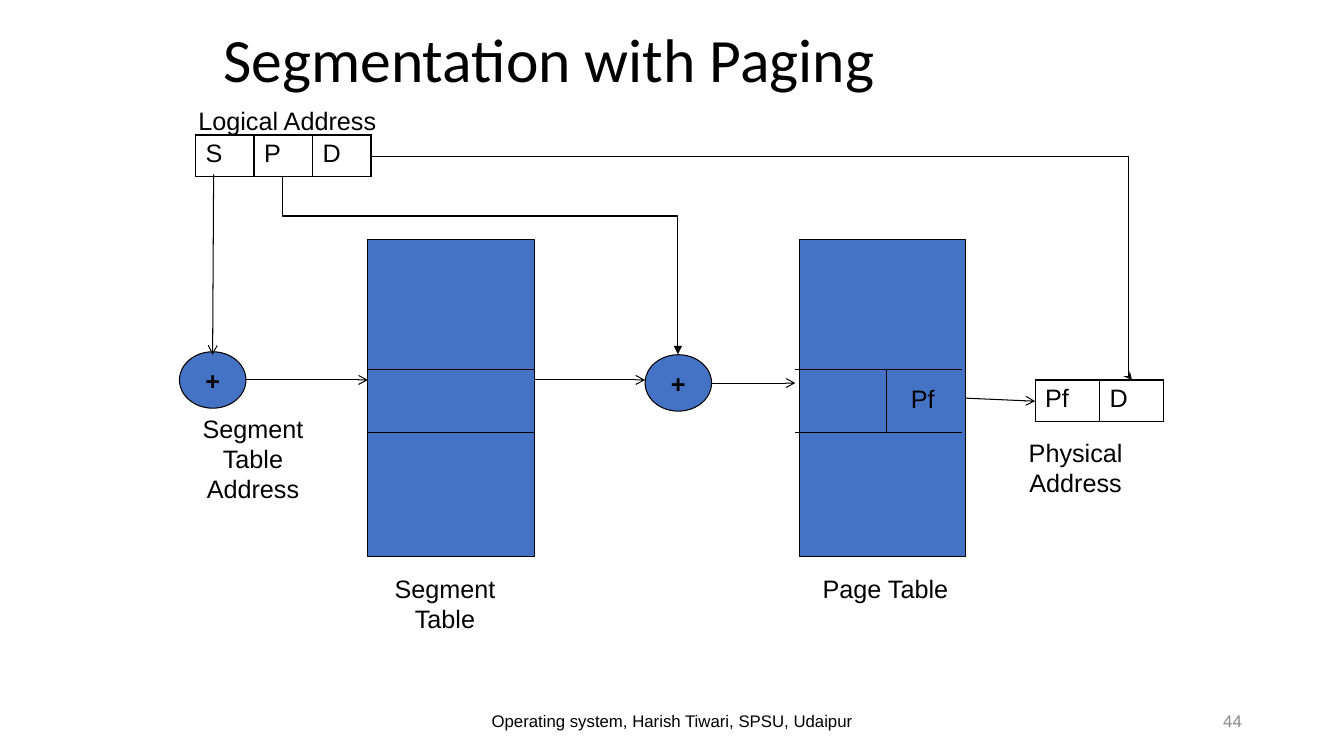
"""Build the slide that explains segmentation with paging."""
from typing import NamedTuple

from lxml import etree
from pptx import Presentation
from pptx.dml.color import RGBColor
from pptx.enum.shapes import MSO_CONNECTOR as Link, MSO_SHAPE as Preset
from pptx.enum.text import MSO_ANCHOR as Anchor, PP_ALIGN as Align
from pptx.oxml.ns import qn
from pptx.util import Pt

BLACK, BLUE, GREY = "000000", "4472C4", "898989"


class Label(NamedTuple):
    text: str
    left: float
    top: float
    width: float
    height: float
    size: float = 18
    align: Align = Align.CENTER
    anchor: Anchor = Anchor.TOP
    font: str = "Arial"
    color: str = BLACK
    spacing: float = 1.0


class Block(NamedTuple):
    preset: Preset
    left: float
    top: float
    width: float
    height: float
    text: str = ""
    bold: bool = False
    align: Align = Align.CENTER
    right_inset: float = 7.2


class Address(NamedTuple):
    fields: tuple[str, ...]
    left: float
    top: float
    field_width: float
    height: float = 29.5


class Line(NamedTuple):
    x1: float
    y1: float
    x2: float
    y2: float
    head: str = ""
    tail: str = ""
    bend: int | None = None
    rotation: int = 0


TITLE = Label("Segmentation with Paging", 152.6, 0, 648, 90, 44, Align.LEFT,
              Anchor.MIDDLE, "Calibri", spacing=0.9)
LABELS = (
    TITLE,
    Label("Logical Address", 86.4, 72, 237.6, 28.8),
    Label("Segment Table Address", 133.2, 291.6, 95, 72.7),
    Label("Segment Table", 253.4, 406, 128.9, 51),
    Label("Page Table", 568, 406, 128.9, 28.8),
    Label("Physical Address", 697, 308.9, 142.6, 51),
    Label("Operating system, Harish Tiwari, SPSU, Udaipur", 318.2, 500.4, 324,
          28.8, 12, anchor=Anchor.MIDDLE),
    Label("44", 678.2, 500.4, 216, 28.8, 12, Align.RIGHT, Anchor.MIDDLE, color=GREY),
)
ADDRESSES = (
    Address(("S", "P", "D"), 139.7, 96.5, 41.8),
    Address(("Pf", "D"), 739.4, 271.4, 46),
)
PAGE_TABLE = Block(Preset.RECTANGLE, 571, 171.4, 119, 226, "Pf",
                   align=Align.RIGHT, right_inset=22.3)
BLOCKS = (
    Block(Preset.RECTANGLE, 262.8, 171.4, 119, 226),
    Block(Preset.OVAL, 128.2, 251.3, 47.5, 40.3, "+", True),
    Block(Preset.OVAL, 460.8, 253.4, 47.5, 40.3, "+", True),
)
ROW_TOP, ROW_BOTTOM = 264.2, 308.9
ROW_LINES = tuple(
    Line(left, y, left + 119, y) for left in (262.8, 568.1) for y in (ROW_TOP, ROW_BOTTOM)
)
LINES = ROW_LINES + (
    Line(632.9, ROW_TOP, 632.9, ROW_BOTTOM),
    Line(152.6, 124.6, 151.9, 253.4, tail="arrow"),
    Line(175.7, 271.4, 262.8, 271.4, tail="arrow"),
    Line(381.8, 271.4, 460.8, 271.4, tail="arrow"),
    Line(508.3, 273.6, 568.1, 273.6, tail="arrow"),
    Line(279.4, 330.5, 406.8, 48.2, head="triangle", bend=77500, rotation=270),
    Line(808.6, 271.4, 264.2, 111.6, head="stealth", bend=500),
)
FRAME_LINE = Line(690, 284.4, 739.4, 286.6, tail="arrow")


def rgb(color: str) -> RGBColor:
    return RGBColor.from_string(color)


def style_para(para, size: float, align: Align, font="Arial", color=BLACK, bold=False) -> None:
    para.alignment = align
    para.font.size = Pt(size)
    para.font.name = font
    para.font.bold = bold
    para.font.color.rgb = rgb(color)


def add_label(page, label: Label) -> None:
    box = page.shapes.add_textbox(Pt(label.left), Pt(label.top), Pt(label.width), Pt(label.height))
    frame = box.text_frame
    frame.word_wrap = True
    frame.vertical_anchor = label.anchor
    frame.text = label.text
    para = frame.paragraphs[0]
    para.line_spacing = label.spacing
    style_para(para, label.size, label.align, label.font, label.color)


def add_block(page, block: Block):
    shape = page.shapes.add_shape(block.preset, Pt(block.left), Pt(block.top),
                                  Pt(block.width), Pt(block.height))
    shape.shadow.inherit = False
    shape.fill.solid()
    shape.fill.fore_color.rgb = rgb(BLUE)
    shape.line.color.rgb = rgb(BLACK)
    shape.line.width = Pt(0.75)
    if block.text:
        frame = shape.text_frame
        frame.word_wrap = False
        frame.vertical_anchor = Anchor.MIDDLE
        frame.margin_right = Pt(block.right_inset)
        frame.text = block.text
        style_para(frame.paragraphs[0], 18, block.align, bold=block.bold)
    return shape


def add_borders(cell) -> None:
    props = cell._tc.get_or_add_tcPr()
    for side in ("lnL", "lnR", "lnT", "lnB"):
        border = etree.SubElement(props, qn(f"a:{side}"), w=str(Pt(1)))
        paint = etree.SubElement(border, qn("a:solidFill"))
        etree.SubElement(paint, qn("a:srgbClr"), val=BLACK)


def add_address(page, address: Address) -> None:
    count = len(address.fields)
    table = page.shapes.add_table(1, count, Pt(address.left), Pt(address.top),
                                  Pt(address.field_width * count), Pt(address.height)).table
    table.first_row = table.horz_banding = False
    for cell, field in zip(table.iter_cells(), address.fields):
        cell.text = field
        style_para(cell.text_frame.paragraphs[0], 18, Align.LEFT)
        add_borders(cell)
        cell.fill.background()


def add_line(page, line: Line):
    kind = Link.STRAIGHT if line.bend is None else Link.ELBOW
    connector = page.shapes.add_connector(kind, Pt(line.x1), Pt(line.y1), Pt(line.x2), Pt(line.y2))
    connector.line.color.rgb = rgb(BLACK)
    connector.line.width = Pt(0.75)
    props = connector.element.spPr
    for tag, arrow in (("a:headEnd", line.head), ("a:tailEnd", line.tail)):
        if arrow:
            etree.SubElement(props.find(qn("a:ln")), qn(tag), type=arrow)
    if line.bend is not None:
        guides = props.find(qn("a:prstGeom")).find(qn("a:avLst"))
        etree.SubElement(guides, qn("a:gd"), name="adj1", fmla=f"val {line.bend}")
    if line.rotation:
        props.find(qn("a:xfrm")).set("rot", str(line.rotation * 60000))
    etree.SubElement(props, qn("a:effectLst"))
    return connector


def main() -> None:
    deck = Presentation()
    deck.slide_width, deck.slide_height = Pt(960), Pt(540)
    page = deck.slides.add_slide(deck.slide_layouts[6])
    for label in LABELS:
        add_label(page, label)
    for address in ADDRESSES:
        add_address(page, address)
    for block in BLOCKS:
        add_block(page, block)
    page_table = add_block(page, PAGE_TABLE)
    for line in LINES:
        add_line(page, line)
    add_line(page, FRAME_LINE).begin_connect(page_table, 3)
    deck.save("out.pptx")


if __name__ == "__main__":
    main()
